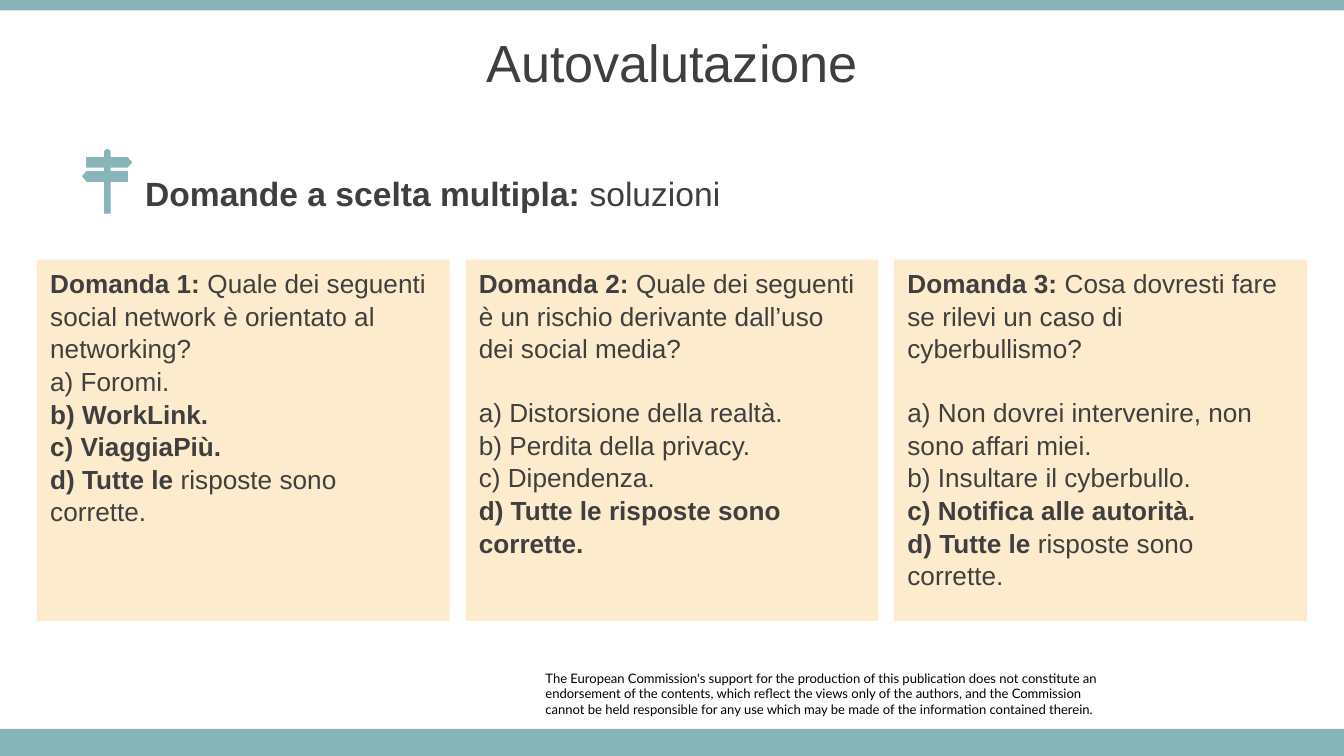
from math import cos, pi, sin

from pptx import Presentation
from pptx.dml.color import RGBColor
from pptx.enum.shapes import MSO_SHAPE
from pptx.enum.text import MSO_ANCHOR, MSO_AUTO_SIZE, PP_ALIGN
from pptx.util import Cm, Pt

RECT = MSO_SHAPE.RECTANGLE
TOP, MIDDLE = MSO_ANCHOR.TOP, MSO_ANCHOR.MIDDLE
LEFT, CENTER = PP_ALIGN.LEFT, PP_ALIGN.CENTER
NO_FIT = MSO_AUTO_SIZE.NONE
TEAL = RGBColor(0x87, 0xB5, 0xBA)
CREAM = RGBColor(0xFC, 0xEC, 0xCD)
DARK = RGBColor(0x3F, 0x3F, 0x3F)
BLACK = RGBColor(0, 0, 0)


def add_run(p, text, size=14, bold=False, color=DARK, font="Arial"):
    r = p.add_run()
    r.text = text
    r.font.size = Pt(size)
    r.font.bold = bold
    r.font.name = font
    r.font.color.rgb = color


def paint(sp, color):
    sp.shadow.inherit = False
    sp.fill.solid()
    sp.fill.fore_color.rgb = color
    sp.line.fill.background()


prs = Presentation()
prs.slide_width, prs.slide_height = Cm(25.4), Cm(14.29)
s = prs.slides.add_slide(prs.slide_layouts[1])

for y, h in [(0, 0.2), (13.78, 0.51)]:
    paint(s.shapes.add_shape(RECT, 0, Cm(y), prs.slide_width, Cm(h)), TEAL)

headings = [
    (s.shapes.title, (0, 0.36, 25.4, 1.6), CENTER, 28,
     [("Autovalutazione", False)]),
    (s.placeholders[1], (2.49, 3.25, 17, 0.79), LEFT, 18,
     [("Domande a scelta multipla: ", True), ("soluzioni", False)]),
]
for sp, box, align, size, runs in headings:
    sp.left, sp.top, sp.width, sp.height = map(Cm, box)
    tf = sp.text_frame
    tf.auto_size = NO_FIT
    tf.vertical_anchor = MIDDLE
    p = tf.paragraphs[0]
    pPr = p._p.get_or_add_pPr()
    pPr.set("marL", "0")
    pPr.set("indent", "0")
    pPr.insert(0, pPr.makeelement(
        "{http://schemas.openxmlformats.org/drawingml/2006/main}buNone", {}))
    p.alignment = align
    p.space_before = Pt(0)
    for text, bold in runs:
        add_run(p, text, size=size, bold=bold)

cap = [(203 + 6 * cos(pi - pi * i / 8), 288 - 6 * sin(pi * i / 8))
       for i in range(9)]
boards = [(209, 297), (241, 297), (250, 307), (241, 317), (209, 317),
          (209, 323), (242, 323), (242, 344), (209, 344), (209, 404),
          (197, 404), (197, 344), (164, 344), (155, 333), (164, 323),
          (197, 323), (197, 317), (163, 317), (163, 297), (197, 297)]
signpost = s.shapes.build_freeform(*cap[0], scale=Cm(0.01))
signpost.add_line_segments(cap[1:] + boards, close=True)
paint(signpost.convert_to_shape(), TEAL)

questions = [
    ("Quale dei seguenti social network è orientato al networking?", 0, [
        [("a) Foromi.", False)],
        [("b) WorkLink.", True)],
        [("c) ViaggiaPiù.", True)],
        [("d) Tutte le", True), (" risposte sono corrette.", False)]]),
    ("Quale dei seguenti è un rischio derivante dall’uso dei social media?", 16.8, [
        [("a) Distorsione della realtà.", False)],
        [("b) Perdita della privacy.", False)],
        [("c) Dipendenza.", False)],
        [("d) Tutte le risposte sono corrette.", True)]]),
    ("Cosa dovresti fare se rilevi un caso di cyberbullismo?", 16.8, [
        [("a) Non dovrei intervenire, non sono affari miei.", False)],
        [("b) Insultare il cyberbullo.", False)],
        [("c) Notifica alle autorità.", True)],
        [("d) Tutte le", True), (" risposte sono corrette.", False)]]),
]
for i, (question, gap, answers) in enumerate(questions):
    sp = s.shapes.add_shape(RECT, Cm(0.7 + 8.1 * i), Cm(4.91), Cm(7.8), Cm(6.83))
    paint(sp, CREAM)
    tf = sp.text_frame
    tf.word_wrap = True
    tf.vertical_anchor = TOP
    p = tf.paragraphs[0]
    add_run(p, f"Domanda {i + 1}: ", bold=True)
    add_run(p, question)
    for j, answer in enumerate(answers):
        p = tf.add_paragraph()
        if j == 0:
            p.space_before = Pt(gap)
        for text, bold in answer:
            add_run(p, text, bold=bold)
    for p in tf.paragraphs:
        p.alignment = LEFT
        p.line_spacing = 1.04

sp = s.shapes.add_textbox(Cm(10.31), Cm(12.67), Cm(10.6), Cm(0.89))
tf = sp.text_frame
tf.word_wrap = True
tf.margin_left = tf.margin_right = tf.margin_top = tf.margin_bottom = 0
p = tf.paragraphs[0]
add_run(p, "The European Commission's support for the production of this "
        "publication does not constitute an endorsement of the contents, which "
        "reflect the views only of the authors, and the Commission",
        size=7, color=BLACK, font="Lato")
p = tf.add_paragraph()
add_run(p, "cannot be held responsible for any use which may be made of the "
        "information contained therein.", size=7, color=BLACK, font="Lato")

prs.save("out.pptx")
